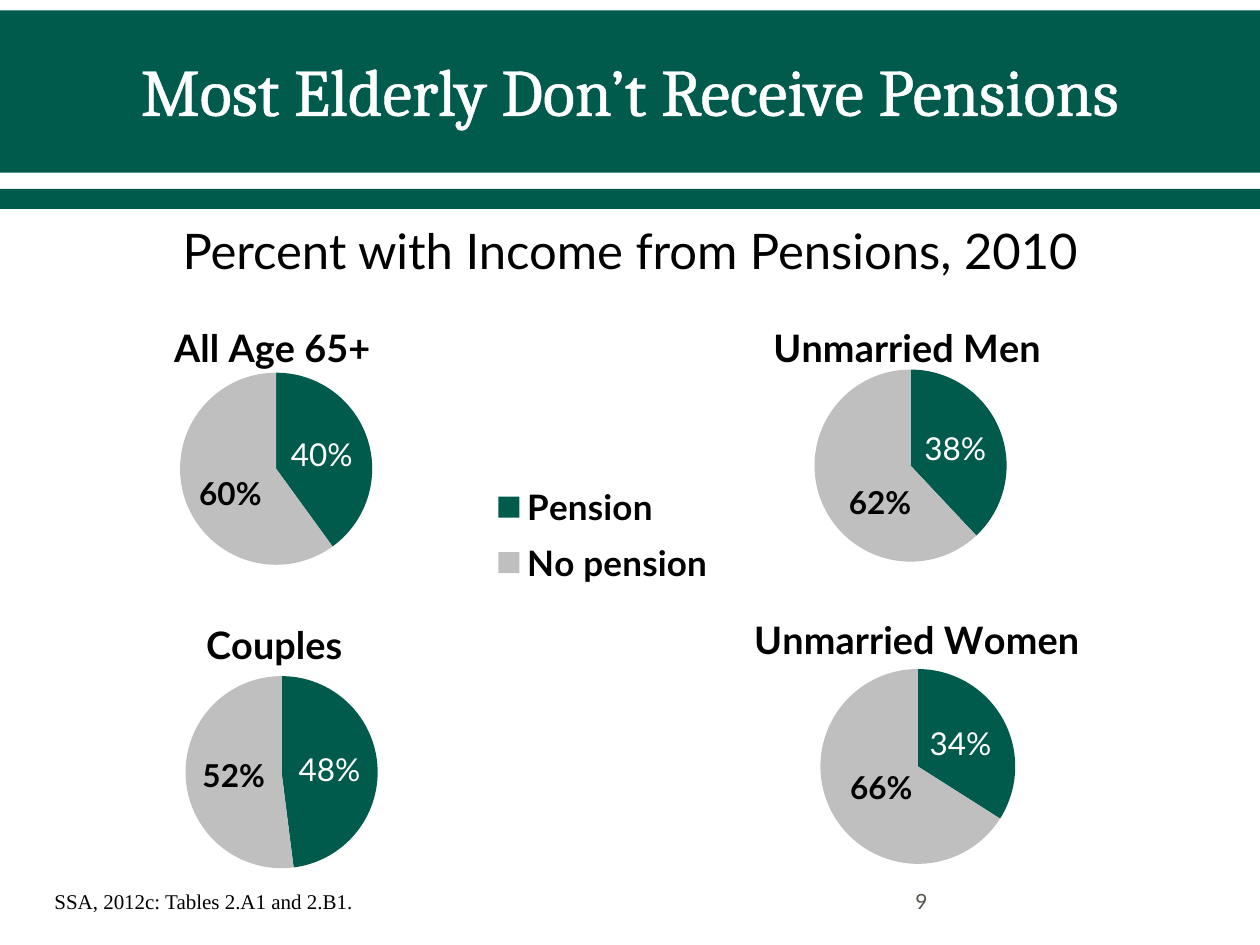
from dataclasses import dataclass

from lxml.etree import SubElement
from pptx import Presentation
from pptx.chart.data import CategoryChartData
from pptx.dml.color import RGBColor
from pptx.enum.chart import XL_CHART_TYPE, XL_LABEL_POSITION, XL_LEGEND_POSITION
from pptx.enum.shapes import MSO_SHAPE
from pptx.enum.text import MSO_ANCHOR, PP_ALIGN
from pptx.oxml import parse_xml
from pptx.oxml.ns import nsdecls, qn
from pptx.util import Inches, Pt


@dataclass
class Theme:
    green: RGBColor = RGBColor.from_string("005B4D")
    silver: RGBColor = RGBColor.from_string("BFBFBF")
    white: RGBColor = RGBColor.from_string("FFFFFF")
    black: RGBColor = RGBColor.from_string("000000")
    gray: RGBColor = RGBColor.from_string("55554A")
    heading: str = "Cambria"
    body: str = "Lato"
    source: str = "Times New Roman"
    title_size: float = 38
    subtitle_size: float = 28
    chart_title_size: float = 21.6
    legend_size: float = 20
    label_size: float = 18
    small_size: float = 12


theme = Theme()
presentation = Presentation()
presentation.slide_width = Inches(10)
presentation.slide_height = Inches(7.5)
column = presentation.slide_width / 120
row = presentation.slide_height / 90
slide = presentation.slides.add_slide(presentation.slide_layouts[1])
title, subtitle = slide.placeholders


def style(font, name, size, color, bold=False):
    font.name = name
    font.size = Pt(size)
    font.color.rgb = color
    font.bold = bold


def set_layout(parent, position, before=None, inner=False, edge=True):
    for old_layout in parent.findall(qn("c:layout")):
        parent.remove(old_layout)
    layout = parse_xml(f"<c:layout {nsdecls('c')}><c:manualLayout/></c:layout>")
    manual = layout[0]
    if inner:
        SubElement(manual, qn("c:layoutTarget")).set("val", "inner")
    if edge:
        for mode in ("xMode", "yMode"):
            SubElement(manual, qn(f"c:{mode}")).set("val", "edge")
    for name, value in zip("xywh", position):
        SubElement(manual, qn(f"c:{name}")).set("val", str(value))
    if before:
        parent.find(qn(before)).addnext(layout)
    else:
        parent.insert(0, layout)


for top, height in ((1, 15.1), (18, 1.9), (1.36, 15.1)):
    band = slide.shapes.add_shape(
        MSO_SHAPE.RECTANGLE, 0, int(top * row), presentation.slide_width, int(height * row))
    band.shadow.inherit = False
    band.fill.solid()
    band.fill.fore_color.rgb = theme.green
    band.line.fill.background()
    title.element.addprevious(band.element)

source = slide.shapes.add_textbox(0, 0, 0, 0)
number = slide.shapes.add_textbox(0, 0, 0, 0)
texts = (
    (title, (1, 1, 118, 15), "Most Elderly Don’t Receive Pensions",
     theme.heading, theme.title_size, theme.white, PP_ALIGN.CENTER, MSO_ANCHOR.MIDDLE),
    (subtitle, (0, 21, 120, 8), "Percent with Income from Pensions, 2010",
     theme.body, theme.subtitle_size, theme.black, PP_ALIGN.CENTER, MSO_ANCHOR.TOP),
    (source, (4, 84, 31.2, 3.6), "SSA, 2012c: Tables 2.A1 and 2.B1.",
     theme.source, theme.small_size, theme.black, PP_ALIGN.LEFT, MSO_ANCHOR.TOP),
    (number, (86, 83.4, 28, 4.8), "9",
     theme.body, theme.small_size, theme.gray, PP_ALIGN.LEFT, MSO_ANCHOR.MIDDLE),
)
for shape, (left, top, width, height), text, font_name, size, color, align, anchor in texts:
    shape.left, shape.top = int(left * column), int(top * row)
    shape.width, shape.height = int(width * column), int(height * row)
    frame = shape.text_frame
    frame.word_wrap = shape is not source
    frame.vertical_anchor = anchor
    paragraph = frame.paragraphs[0]
    paragraph.alignment = align
    run = paragraph.add_run()
    run.text = text
    style(run.font, font_name, size, color)

title_run = title.text_frame.paragraphs[0].runs[0]
title_run._r.get_or_add_rPr().insert(0, parse_xml(
    f'<a:ln {nsdecls("a")} w="{Pt(1.1)}"><a:solidFill><a:srgbClr val="{theme.white}"/>'
    "</a:solidFill></a:ln>"))

paragraph = subtitle.text_frame.paragraphs[0]
properties = paragraph._p.get_or_add_pPr()
properties.set("marL", str(Inches(0.38)))
properties.set("indent", str(-Inches(0.38)))
SubElement(properties, qn("a:buNone"))
paragraph.line_spacing = 0.9
paragraph.space_before = Pt(0)
paragraph.space_after = Pt(8)

pies = (
    ("All Age 65+", (8, 28, 61, 30), (40, 60), (0.15, 0.24, 0.3, 0.63), (0.13, 0.06), (0, 0.03)),
    ("Couples", (4.2, 56, 44.8, 30), (48, 52), (0.3, 0.28, 0.41, 0.61), (0.33, 0.07), None),
    ("Unmarried Men", (64, 28, 45, 30), (38, 62), (0.3, 0.24, 0.41, 0.61), (0.2, 0.06), (0.03, 0.06)),
    ("Unmarried Women", (59, 55.2, 58, 30.7), (34, 66), (0.33, 0.26, 0.32, 0.64), (0.21, 0.08), (0.01, -0.01)),
)
for name, (left, top, width, height), values, plot_box, title_spot, label_shift in pies:
    data = CategoryChartData()
    data.categories = ("Pension", "No pension")
    data.add_series(name, values)
    chart = slide.shapes.add_chart(
        XL_CHART_TYPE.PIE, int(left * column), int(top * row),
        int(width * column), int(height * row), data).chart
    style(chart.font, theme.body, theme.label_size, theme.black)
    chart_element = chart._chartSpace.chart

    chart.has_title = True
    title_run = chart.chart_title.text_frame.paragraphs[0].add_run()
    title_run.text = name
    style(title_run.font, theme.body, theme.chart_title_size, theme.black, True)
    set_layout(chart_element.find(qn("c:title")), title_spot, "c:tx")
    set_layout(chart_element.plotArea, plot_box, inner=True)

    chart.has_legend = name == "All Age 65+"
    if chart.has_legend:
        legend = chart.legend
        legend.position = XL_LEGEND_POSITION.RIGHT
        legend.include_in_layout = False
        style(legend.font, theme.body, theme.legend_size, theme.black, True)
        set_layout(chart_element.find(qn("c:legend")), (0.64, 0.57, 0.35, 0.39), "c:legendPos")

    plot = chart.plots[0]
    plot.vary_by_categories = True
    series = plot.series[0]
    labels = series.data_labels
    labels.show_value = False
    labels.show_percentage = True
    labels.number_format = "0%"
    labels.number_format_is_linked = False
    labels.position = XL_LABEL_POSITION.CENTER
    style(labels.font, theme.body, theme.label_size, theme.black, True)

    for index, color in enumerate((theme.green, theme.silver)):
        fill = series.points[index].format.fill
        fill.solid()
        fill.fore_color.rgb = color

    pension_label = series.points[0].data_label
    label_run = pension_label.text_frame.paragraphs[0].add_run()
    label_run.text = f"{values[0]}%"
    style(label_run.font, theme.body, theme.label_size, theme.white)
    pension_label.position = XL_LABEL_POSITION.CENTER

    if label_shift:
        other_label = series.points[1].data_label
        style(other_label.font, theme.body, theme.label_size, theme.black, True)
        other_label.position = XL_LABEL_POSITION.CENTER
        label_element = labels._element.findall(qn("c:dLbl"))[1]
        label_element.find(qn("c:showVal")).set("val", "0")
        label_element.find(qn("c:showPercent")).set("val", "1")
        set_layout(label_element, label_shift, "c:idx", edge=False)

presentation.save("out.pptx")
